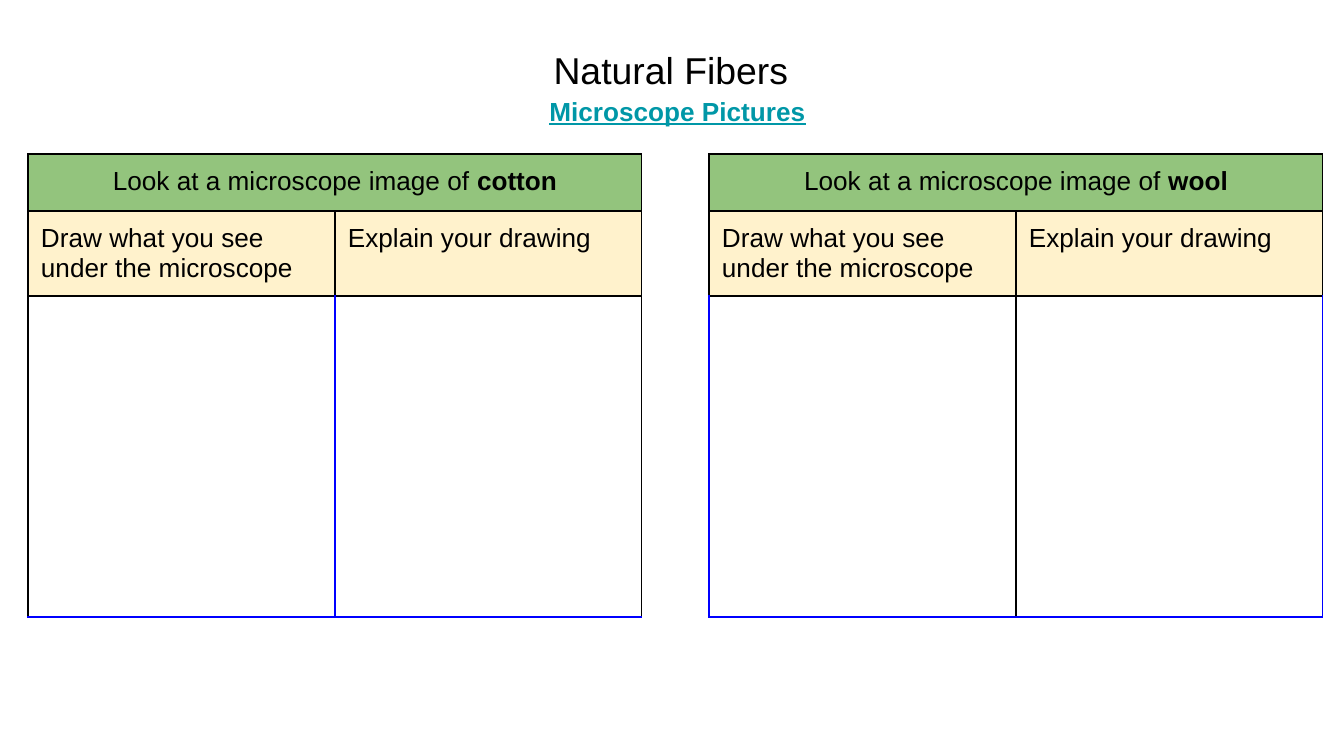
from lxml import etree
from pptx import Presentation
from pptx.dml.color import RGBColor
from pptx.enum.text import MSO_ANCHOR, MSO_AUTO_SIZE, PP_ALIGN
from pptx.oxml.ns import qn
from pptx.util import Pt

TOP, NO_FIT = MSO_ANCHOR.TOP, MSO_AUTO_SIZE.NONE
LEFT, CENTER = PP_ALIGN.LEFT, PP_ALIGN.CENTER
PX = 914400 / 134.4
FONT = "Arial"
BLACK, BLUE, TEAL = "000000", "0000FF", "0097A7"
GREEN, CREAM = "93C47D", "FFF2CC"

TITLE = "Natural Fibers"
SUBTITLE = "Microscope Pictures"
HEADING = "Look at a microscope image of "
PROMPTS = ["Draw what you see under the microscope", "Explain your drawing"]
FIBERS = [
    {"name": "cotton", "left": 28, "outer": BLACK, "middle": BLUE},
    {"name": "wool", "left": 709, "outer": BLUE, "middle": BLACK},
]
TABLE_TOP, COLUMN_WIDTH = 154, 307
ROW_HEIGHTS = [57, 85, 321]
MARGIN = 13


def px(value):
    return round(value * PX)


def color(value):
    return RGBColor.from_string(value)


def format_text(paragraph, size, align, value=BLACK):
    paragraph.alignment = align
    for run in paragraph.runs:
        run.font.name = FONT
        run.font.size = Pt(size)
        run.font.color.rgb = color(value)


def place_text(shape, box, text, size, value=BLACK):
    shape.left, shape.top, shape.width, shape.height = map(px, box)
    frame = shape.text_frame
    frame.text = text
    frame.word_wrap = True
    frame.auto_size = NO_FIT
    frame.vertical_anchor = TOP
    frame.margin_left = frame.margin_right = px(MARGIN)
    frame.margin_top = frame.margin_bottom = px(MARGIN)
    format_text(frame.paragraphs[0], size, CENTER, value)


def format_cell(cell, fill, borders):
    cell.margin_left = cell.margin_right = px(MARGIN)
    cell.margin_top = cell.margin_bottom = px(MARGIN)
    if fill:
        cell.fill.solid()
        cell.fill.fore_color.rgb = color(fill)
    else:
        cell.fill.background()
    properties = cell._tc.get_or_add_tcPr()
    for index, (side, value) in enumerate(zip("LRTB", borders)):
        line = etree.Element(qn(f"a:ln{side}"), w=str(Pt(0.75)))
        solid = etree.SubElement(line, qn("a:solidFill"))
        etree.SubElement(solid, qn("a:srgbClr"), val=value)
        properties.insert(index, line)


def add_fiber_table(slide, fiber):
    frame = slide.shapes.add_table(
        3, 2, px(fiber["left"]), px(TABLE_TOP), px(2 * COLUMN_WIDTH), px(sum(ROW_HEIGHTS)))
    table = frame.table
    table.first_row = table.horz_banding = False
    for column in table.columns:
        column.width = px(COLUMN_WIDTH)
    for row, height in zip(table.rows, ROW_HEIGHTS):
        row.height = px(height)

    outer, middle = fiber["outer"], fiber["middle"]
    for index, prompt in enumerate(PROMPTS):
        format_cell(table.cell(0, index), GREEN, [BLACK] * 4)
        cell = table.cell(1, index)
        cell.text_frame.text = prompt
        format_text(cell.text_frame.paragraphs[0], 14, LEFT)
        format_cell(cell, CREAM, [BLACK] * 4)
        sides = [outer, middle] if index == 0 else [middle, outer]
        format_cell(table.cell(2, index), None, sides + [BLACK, BLUE])

    heading = table.cell(0, 0)
    heading.merge(table.cell(0, 1))
    paragraph = heading.text_frame.paragraphs[0]
    paragraph.text = HEADING
    name = paragraph.add_run()
    name.text = fiber["name"]
    name.font.bold = True
    format_text(paragraph, 14, CENTER)


presentation = Presentation()
presentation.slide_width, presentation.slide_height = px(1344), px(756)
slide = presentation.slides.add_slide(presentation.slide_layouts[5])

for fiber in FIBERS:
    add_fiber_table(slide, fiber)

place_text(slide.shapes.title, (497, 34, 348, 73), TITLE, 20)
subtitle = slide.shapes.add_textbox(0, 0, 0, 0)
place_text(subtitle, (517, 82, 321, 63), SUBTITLE, 14, TEAL)
link_font = subtitle.text_frame.paragraphs[0].runs[0].font
link_font.bold = link_font.underline = True

presentation.save("out.pptx")
